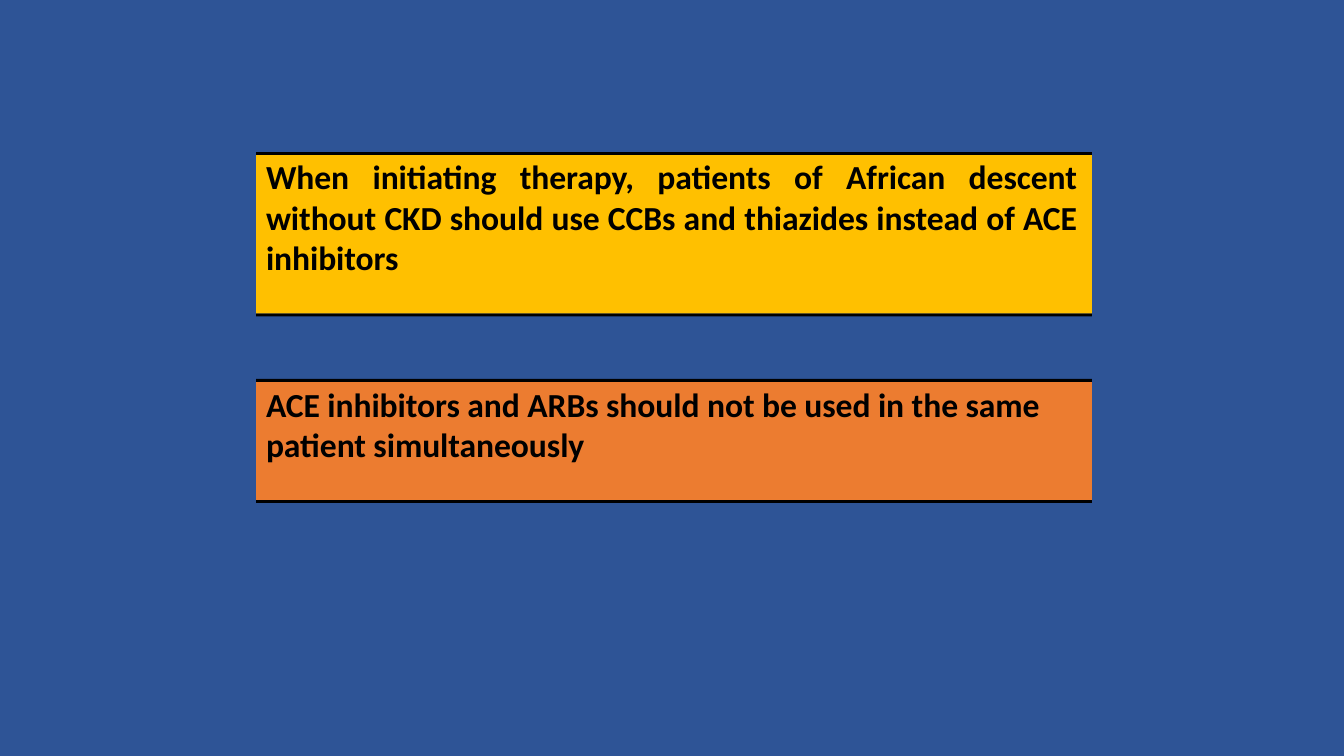
"""Build a slide with two ruled recommendation boxes on a blue background."""
from pptx import Presentation
from pptx.dml.color import RGBColor as RGB
from pptx.enum.shapes import MSO_SHAPE as Shape
from pptx.enum.text import MSO_ANCHOR as Anchor, PP_ALIGN as Align
from pptx.util import Inches, Pt

THEME = {
    "background": "2E5496",
    "rule": "000000",
    "text": "000000",
    "caution": "FFC000",
    "warning": "EC7C30",
    "font": "Calibri",
    "size": 24,
    "tracking": -5,
}
RECOMMENDATIONS = [
    {
        "text": "When initiating therapy, patients of African descent without CKD "
                "should use CCBs and thiazides instead of ACE inhibitors",
        "color": "caution", "top": 1.54, "height": 1.57,
        "align": Align.JUSTIFY, "inset_top": 0.01,
    },
    {
        "text": "ACE inhibitors and ARBs should not be used in the same "
                "patient simultaneously",
        "color": "warning", "top": 3.79, "height": 1.17,
        "align": Align.LEFT, "inset_top": 0.02,
    },
]
LEFT, WIDTH, RULE = 2.54, 8.29, 0.03
INSET_LEFT, INSET_RIGHT = 0.1, 0.15


def add_block(slide, top, height, color):
    """Add a plain filled rectangle in the shared column."""
    block = slide.shapes.add_shape(
        Shape.RECTANGLE, Inches(LEFT), Inches(top), Inches(WIDTH), Inches(height))
    block.shadow.inherit = False
    block.fill.solid()
    block.fill.fore_color.rgb = RGB.from_string(THEME[color])
    block.line.fill.background()
    return block


def write(block, text, *, align, inset_top):
    """Write bold text from the top of a block."""
    frame = block.text_frame
    frame.word_wrap = True
    frame.vertical_anchor = Anchor.TOP
    frame.margin_left, frame.margin_right = Inches(INSET_LEFT), Inches(INSET_RIGHT)
    frame.margin_top, frame.margin_bottom = Inches(inset_top), 0
    paragraph = frame.paragraphs[0]
    paragraph.alignment = align
    paragraph.space_before = Pt(1.1)
    run = paragraph.add_run()
    run.text = text
    run.font.name = THEME["font"]
    run.font.size = Pt(THEME["size"])
    run.font.bold = True
    run.font.color.rgb = RGB.from_string(THEME["text"])
    run._r.get_or_add_rPr().set("spc", str(THEME["tracking"]))


def main():
    """Build and save the slide."""
    deck = Presentation()
    deck.slide_width, deck.slide_height = Inches(13.33), Inches(7.5)
    slide = deck.slides.add_slide(deck.slide_layouts[6])
    slide.background.fill.solid()
    slide.background.fill.fore_color.rgb = RGB.from_string(THEME["background"])
    for item in RECOMMENDATIONS:
        top, height = item["top"], item["height"]
        for rule_top in (top - RULE, top + height):
            add_block(slide, rule_top, RULE, "rule")
        box = add_block(slide, top, height, item["color"])
        write(box, item["text"], align=item["align"], inset_top=item["inset_top"])
    deck.save("out.pptx")


if __name__ == "__main__":
    main()
